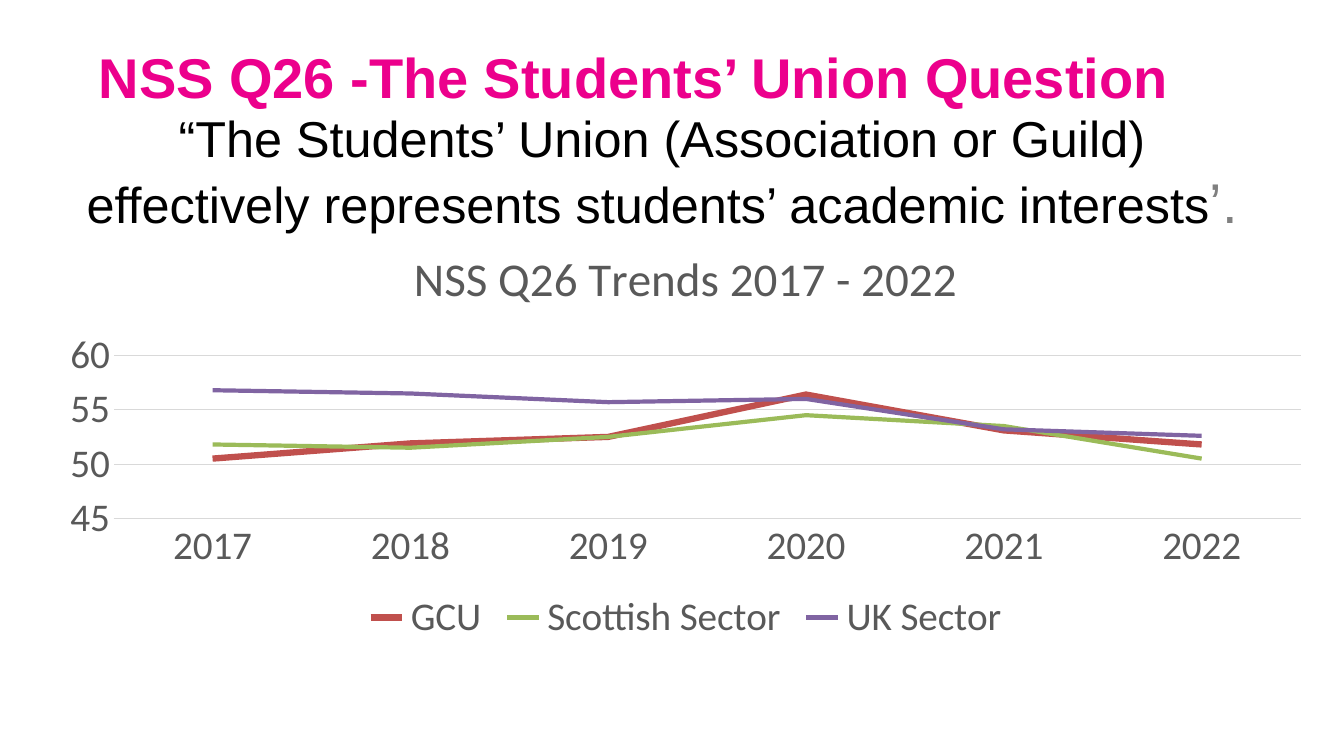
from lxml.etree import SubElement
from pptx import Presentation
from pptx.chart.data import CategoryChartData
from pptx.dml.color import RGBColor
from pptx.enum.chart import XL_CHART_TYPE, XL_LEGEND_POSITION, XL_TICK_MARK
from pptx.enum.text import MSO_ANCHOR, PP_ALIGN
from pptx.oxml.ns import qn
from pptx.util import Pt

PINK, BLACK, GREY = "EC008C", "000000", "808080"
TEXT, GRID = "595959", "D9D9D9"
YEARS = ["2017", "2018", "2019", "2020", "2021", "2022"]
TRENDS = [
    ("GCU", [50.5, 51.9, 52.5, 56.4, 53.1, 51.8], "C0504D", 4.5),
    ("Scottish Sector", [51.8, 51.5, 52.5, 54.5, 53.5, 50.5], "9BBB59", 3),
    ("UK Sector", [56.8, 56.5, 55.7, 56, 53.2, 52.6], "8064A2", 3),
]
PLOT = {"x": 0.054, "y": 0.31, "w": 0.925, "h": 0.383}


def color(code):
    return RGBColor.from_string(code)


def style(font, face, size, code, bold=False):
    font.name, font.size, font.bold = face, Pt(size), bold
    font.color.rgb = color(code)


def stroke(line, code, width):
    line.color.rgb = color(code)
    line.width = Pt(width)


def place(chart, area):
    """Fix the inner plot area, as fractions of the chart."""
    plot = chart.plots[0]._element.getparent()
    layout = plot.find(qn("c:layout"))
    if layout is None:
        layout = SubElement(plot, qn("c:layout"))
        plot.insert(0, layout)
    manual = SubElement(layout, qn("c:manualLayout"))
    SubElement(manual, qn("c:layoutTarget")).set("val", "inner")
    for side in "xy":
        SubElement(manual, qn(f"c:{side}Mode")).set("val", "edge")
    for key, part in area.items():
        SubElement(manual, qn(f"c:{key}")).set("val", str(part))


class Deck:
    face = "Arial"
    chart_face = "Calibri"
    chart_size = 28

    def __init__(self, width, height):
        self.show = Presentation()
        self.show.slide_width, self.show.slide_height = Pt(width), Pt(height)
        self.slide = self.show.slides.add_slide(self.show.slide_layouts[6])

    def text(self, box, runs, align=PP_ALIGN.LEFT, anchor=MSO_ANCHOR.TOP):
        """Add one paragraph; each run is (text, size, colour, bold)."""
        frame = self.slide.shapes.add_textbox(*map(Pt, box)).text_frame
        frame.word_wrap = True
        frame.vertical_anchor = anchor
        para = frame.paragraphs[0]
        para.alignment = align
        for words, size, code, bold in runs:
            run = para.add_run()
            run.text = words
            style(run.font, self.face, size, code, bold)

    def axis(self, axis):
        axis.major_tick_mark = axis.minor_tick_mark = XL_TICK_MARK.NONE
        style(axis.tick_labels.font, self.chart_face, self.chart_size, TEXT)

    def lines(self, box, title, names, trends):
        data = CategoryChartData()
        data.categories = names
        for name, values, *_ in trends:
            data.add_series(name, values)
        chart = self.slide.shapes.add_chart(
            XL_CHART_TYPE.LINE, *map(Pt, box), data).chart
        style(chart.font, self.chart_face, self.chart_size, BLACK)
        chart.plots[0].vary_by_categories = False
        for series, (_, _, code, width) in zip(chart.series, trends):
            series.smooth = False
            stroke(series.format.line, code, width)

        head = chart.chart_title.text_frame
        head.text = title
        style(head.paragraphs[0].runs[0].font, self.chart_face, 33.6, TEXT)
        chart.chart_title.include_in_layout = False

        years, score = chart.category_axis, chart.value_axis
        self.axis(years)
        self.axis(score)
        stroke(years.format.line, GRID, 0.75)
        stroke(score.major_gridlines.format.line, GRID, 0.75)
        score.format.line.fill.background()
        score.minimum_scale, score.maximum_scale = 45, 60
        score.major_unit = 5
        score.tick_labels.number_format = "0"
        score.tick_labels.number_format_is_linked = False

        chart.has_legend = True
        chart.legend.position = XL_LEGEND_POSITION.BOTTOM
        chart.legend.include_in_layout = False
        style(chart.legend.font, self.chart_face, self.chart_size, TEXT)
        place(chart, PLOT)

    def save(self):
        self.show.save("out.pptx")


def main():
    deck = Deck(960, 540)
    deck.text((63.4, -10.8, 848.2, 130.3),
              [("NSS Q26 -The Students’ Union Question", 40, PINK, True)],
              anchor=MSO_ANCHOR.MIDDLE)
    deck.text((49.7, 72.7, 846.7, 74.9),
              [("“The Students’ Union (Association or Guild) effectively "
                "represents students’ academic interests", 36, BLACK, False),
               ("’.", 40, GREY, False)],
              align=PP_ALIGN.CENTER)
    deck.lines((31.7, 159.8, 916.6, 303.8),
               "NSS Q26 Trends 2017 - 2022", YEARS, TRENDS)
    deck.save()


if __name__ == "__main__":
    main()
